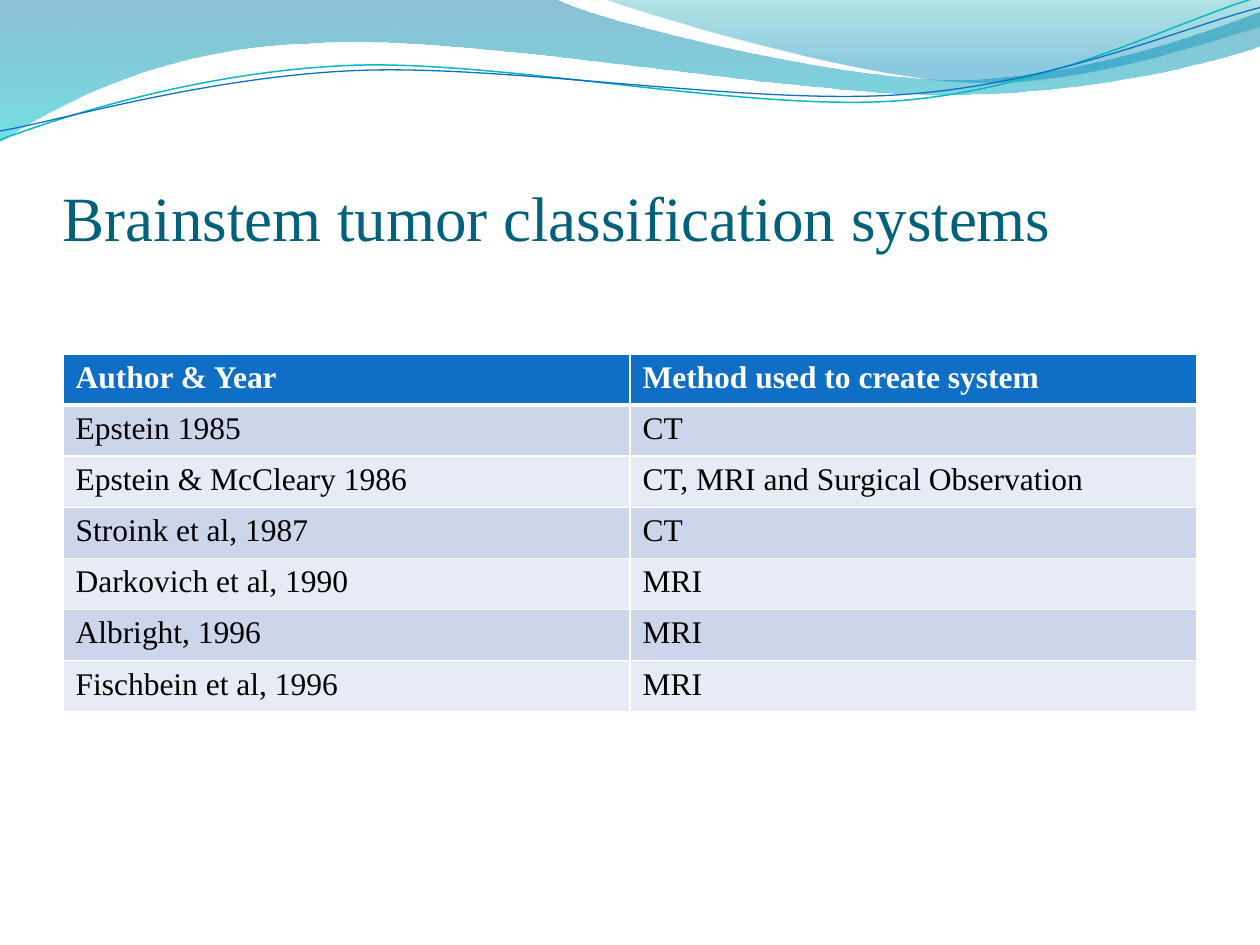
from lxml.etree import SubElement
from pptx import Presentation
from pptx.dml.color import RGBColor
from pptx.enum.text import MSO_ANCHOR
from pptx.oxml.ns import qn
from pptx.util import Inches, Pt

FONT = "Times New Roman"
TITLE = "Brainstem tumor classification systems"
ROWS = [
    ("Author & Year", "Method used to create system"),
    ("Epstein 1985", "CT"),
    ("Epstein & McCleary 1986", "CT, MRI and Surgical Observation"),
    ("Stroink et al, 1987", "CT"),
    ("Darkovich et al, 1990", "MRI"),
    ("Albright, 1996", "MRI"),
    ("Fischbein et al, 1996", "MRI"),
]
HEADER_FILL = "0F6FC6"
BAND_FILLS = ("E7EBF5", "CCD5EA")

WAVES = [
    ([
        [(0, 0)],
        [(4.4, -0.01)],
        [(4.76, 0.17), (6.64, 0.63), (7.58, 0.63)],
        [(8.53, 0.63), (9.58, 0.26), (10, 0.09)],
        [(10.01, 0.36)],
        [(9.83, 0.44), (8.7, 0.76), (7.46, 0.75)],
        [(6.22, 0.75), (3.82, 0.28), (2.57, 0.34)],
        [(1.29, 0.36), (0.46, 0.83), (-0.01, 1.13)],
    ], [(0, "0074A1", 45), (1, "00C6CF", 55)]),
    ([
        [(4.79, -0.01)],
        [(5.09, 0.11), (6.82, 0.62), (7.69, 0.65)],
        [(8.56, 0.69), (9.61, 0.32), (10, 0.21)],
        [(10, 0)],
    ], [(0, "00A1A9", 30), (0.8, "008BBF", 45)]),
]
WAVE_LINES = [
    ([
        [(0, 1.11)],
        [(0.48, 0.93), (1.58, 0.57), (2.77, 0.52)],
        [(3.95, 0.47), (5.93, 0.89), (7.13, 0.8)],
        [(8.33, 0.71), (9.38, 0.15), (9.98, -0.02)],
    ], "0AB8BF", 0.85),
    ([
        [(0, 1.04)],
        [(0.47, 0.96), (1.64, 0.61), (2.83, 0.56)],
        [(4.03, 0.51), (5.97, 0.84), (7.17, 0.75)],
        [(8.36, 0.67), (9.41, 0.21), (10, 0.06)],
    ], "0F6FC6", 0.75),
]
UNITS_PER_INCH = 1000


def color(value):
    return RGBColor.from_string(value)


def add_outline(slide, segments, close):
    scaled = [
        [tuple(round(length * UNITS_PER_INCH) for length in point) for point in segment]
        for segment in segments
    ]
    ends = [segment[-1] for segment in scaled]
    left, top = (min(axis) for axis in zip(*ends))
    builder = slide.shapes.build_freeform(*ends[0], scale=Inches(1) / UNITS_PER_INCH)
    builder.add_line_segments(ends[1:], close=close)
    shape = builder.convert_to_shape()
    shape.shadow.inherit = False
    straight_lines = list(shape.element.spPr.iter(qn("a:lnTo")))
    for element, segment in zip(straight_lines, scaled[1:]):
        if len(segment) == 3:
            curve = element.makeelement(qn("a:cubicBezTo"))
            for x, y in segment:
                SubElement(curve, qn("a:pt"), x=str(x - left), y=str(y - top))
            element.getparent().replace(element, curve)
    return shape


def add_wave(slide, segments, stops):
    shape = add_outline(slide, segments, True)
    shape.line.fill.background()
    shape.fill.gradient()
    shape.fill.gradient_angle = 270
    for stop, (position, value, opacity) in zip(shape.fill.gradient_stops, stops):
        stop.position = position
        stop.color.rgb = color(value)
    elements = shape.element.spPr.iter(qn("a:srgbClr"))
    for element, (position, value, opacity) in zip(elements, stops):
        SubElement(element, qn("a:alpha"), val=str(opacity * 1000))


def add_wave_line(slide, segments, value, width):
    shape = add_outline(slide, segments, False)
    shape.fill.background()
    shape.line.color.rgb = color(value)
    shape.line.width = Pt(width)


def format_text(text_frame, size, value, bold=False):
    for paragraph in text_frame.paragraphs:
        for run in paragraph.runs:
            run.font.name = FONT
            run.font.size = Pt(size)
            run.font.bold = bold
            run.font.color.rgb = color(value)


def add_title(slide):
    shape = slide.shapes.add_textbox(Inches(0.5), Inches(0.77), Inches(9), Inches(1.25))
    frame = shape.text_frame
    frame.word_wrap = True
    frame.vertical_anchor = MSO_ANCHOR.BOTTOM
    frame.margin_left = frame.margin_right = frame.margin_bottom = 0
    frame.margin_top = Inches(0.05)
    frame.text = TITLE
    format_text(frame, 36, "04617B")


def add_borders(cell, widths):
    properties = cell._tc.get_or_add_tcPr()
    for side, width in widths.items():
        line = SubElement(properties, qn(f"a:ln{side}"), w=str(Pt(width)))
        fill = SubElement(line, qn("a:solidFill"))
        SubElement(fill, qn("a:srgbClr"), val="FFFFFF")


def add_systems_table(slide):
    table = slide.shapes.add_table(
        len(ROWS), len(ROWS[0]), Inches(0.5), Inches(2.81), Inches(9), Inches(2.84)
    ).table
    for row, texts in enumerate(ROWS):
        header = row == 0
        for column, text in enumerate(texts):
            cell = table.cell(row, column)
            cell.text = text
            format_text(cell.text_frame, 18, "FFFFFF" if header else "000000", header)
            add_borders(cell, {
                "L": 1, "R": 1, "T": 3 if row == 1 else 1, "B": 3 if header else 1,
            })
            cell.fill.solid()
            cell.fill.fore_color.rgb = color(HEADER_FILL if header else BAND_FILLS[row % 2])


def main():
    presentation = Presentation()
    presentation.slide_width = Inches(10)
    presentation.slide_height = Inches(7.5)
    slide = presentation.slides.add_slide(presentation.slide_layouts[6])
    for wave in WAVES:
        add_wave(slide, *wave)
    for wave_line in WAVE_LINES:
        add_wave_line(slide, *wave_line)
    add_title(slide)
    add_systems_table(slide)
    presentation.save("out.pptx")


if __name__ == "__main__":
    main()
